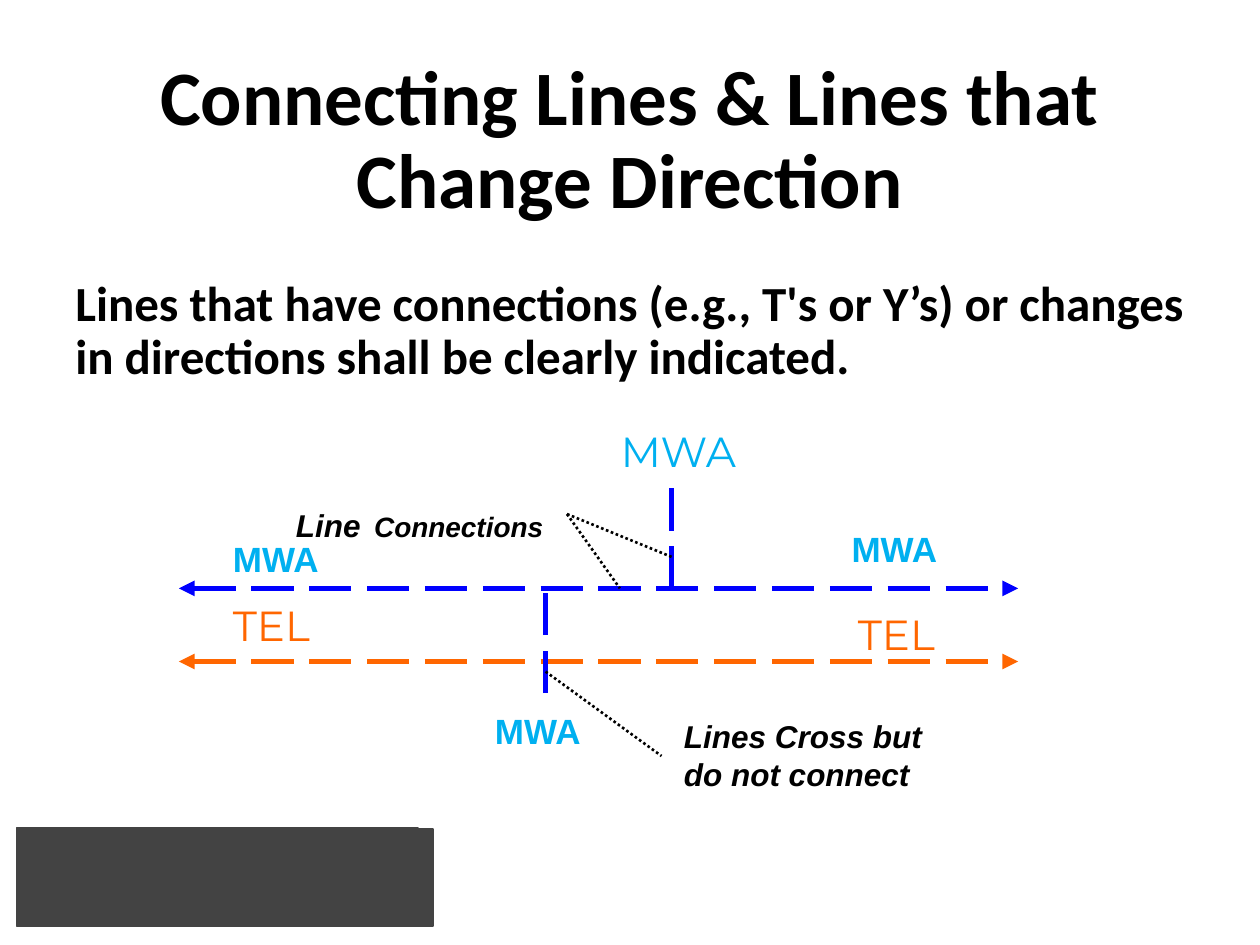
import pptx
import pptx.util
import pptx.dml.color
import pptx.enum.dml
import pptx.enum.shapes
import pptx.enum.text
import pptx.oxml.ns
import lxml.etree

Inches, Pt = pptx.util.Inches, pptx.util.Pt
DASH = pptx.enum.dml.MSO_LINE
ALIGN = pptx.enum.text.PP_ALIGN
ANCHOR = pptx.enum.text.MSO_ANCHOR

COLORS = {
    "black": "000000",
    "footer": "434343",
    "water": "0000FF",
    "water label": "00B0F0",
    "telecom": "FF6600",
}

FOOTER_BLOCKS = [(0.13, 6.57, 3.19, 0.78), (0.21, 6.58, 3.23, 0.77)]

TITLE = "Connecting Lines & Lines that Change Direction"
RULE = ("Lines that have connections (e.g., T's or Y’s) or changes "
        "in directions shall be clearly indicated.")

STYLES = {
    "title": dict(font="Calibri", size=44, color="black", bold=True, spacing=0.9,
                  align=ALIGN.CENTER, anchor=ANCHOR.MIDDLE),
    "body": dict(font="Calibri", size=28, color="black", bold=True, spacing=0.9),
    "water": dict(font="Arial", size=20, color="water label", bold=True),
    "water light": dict(font="Montserrat", size=24, color="water label"),
    "telecom": dict(font="Montserrat", size=24, color="telecom"),
    "note": dict(font="Arial", size=18, color="black", bold=True, italic=True),
}

TEXTS = [
    ("title", (0.69, 0.4, 8.62, 1.45), [(TITLE, None)]),
    ("body", (0.5, 2.17, 9, 4.53), [(RULE, None)]),
    ("water", (6.66, 4.14, 0.92, 0.43), [("MWA", None)]),
    ("water", (1.75, 4.22, 0.92, 0.43), [("MWA", None)]),
    ("water", (3.83, 5.58, 0.92, 0.43), [("MWA", None)]),
    ("water light", (4.83, 3.33, 1.17, 0.5), [("MWA", None)]),
    ("telecom", (6.71, 4.78, 1.08, 0.5), [("TEL", None)]),
    ("telecom", (1.75, 4.71, 1.08, 0.5), [("TEL", None)]),
    ("note", (2.25, 3.83, 2.67, 0.57), [("Line", 18), (" ", 28), ("Connections", 16)]),
    ("note", (5.33, 5.64, 2.25, 0.7), [("Lines Cross but do not connect", None)]),
]

LEFT, RIGHT = 1.42, 8.08
WATER_Y, TELECOM_Y = 4.67, 5.25
UPPER_X, LOWER_X = 5.33, 4.33
CALLOUT = (4.5, 4.08)

MAINS = [
    ("water", (LEFT, WATER_Y), (RIGHT, WATER_Y)),
    ("telecom", (LEFT, TELECOM_Y), (RIGHT, TELECOM_Y)),
]
BRANCHES = [
    ("water", (UPPER_X, WATER_Y), (UPPER_X, 3.83)),
    ("water", (LOWER_X, 5.5), (LOWER_X, WATER_Y)),
]
LEADERS = [
    ("black", CALLOUT, (UPPER_X, 4.42)),
    ("black", (LOWER_X, 5.33), (5.25, 6)),
    ("black", CALLOUT, (4.92, WATER_Y)),
]


def rgb(name):
    return pptx.dml.color.RGBColor.from_string(COLORS[name])


def add_footer_block(slide, place):
    block = slide.shapes.add_shape(
        pptx.enum.shapes.MSO_SHAPE.RECTANGLE, *map(Inches, place))
    block.shadow.inherit = False
    block.fill.solid()
    block.fill.fore_color.rgb = rgb("footer")
    block.line.color.rgb = rgb("footer")
    block.line.width = Pt(1)


def add_text(slide, style_name, place, runs):
    style = STYLES[style_name]
    frame = slide.shapes.add_textbox(*map(Inches, place)).text_frame
    frame.word_wrap = True
    frame.vertical_anchor = style.get("anchor", ANCHOR.TOP)
    paragraph = frame.paragraphs[0]
    paragraph.alignment = style.get("align", ALIGN.LEFT)
    paragraph.line_spacing = style.get("spacing", 1.0)
    font = paragraph.font
    font.name = style["font"]
    font.size = Pt(style["size"])
    font.bold = style.get("bold", False)
    font.italic = style.get("italic", False)
    font.color.rgb = rgb(style["color"])
    for words, size in runs:
        run = paragraph.add_run()
        run.text = words
        if size:
            run.font.size = Pt(size)


def add_line(slide, color, start, end, width, dash, arrows=False):
    connector = slide.shapes.add_connector(
        pptx.enum.shapes.MSO_CONNECTOR.STRAIGHT, *map(Inches, start + end))
    connector.line.color.rgb = rgb(color)
    connector.line.width = Pt(width)
    connector.line.dash_style = dash
    qn = pptx.oxml.ns.qn
    properties = connector._element.spPr
    if arrows:
        outline = properties.find(qn("a:ln"))
        for tip in ("a:headEnd", "a:tailEnd"):
            lxml.etree.SubElement(outline, qn(tip), type="triangle")
    lxml.etree.SubElement(properties, qn("a:effectLst"))


def main():
    deck = pptx.Presentation()
    deck.slide_width, deck.slide_height = Inches(10), Inches(7.5)
    slide = deck.slides.add_slide(deck.slide_layouts[6])
    for place in FOOTER_BLOCKS:
        add_footer_block(slide, place)
    for main_line in MAINS:
        add_line(slide, *main_line, 3, DASH.LONG_DASH, arrows=True)
    for branch in BRANCHES:
        add_line(slide, *branch, 3, DASH.LONG_DASH)
    for leader in LEADERS:
        add_line(slide, *leader, 1.5, DASH.ROUND_DOT)
    for text in TEXTS:
        add_text(slide, *text)
    deck.save("out.pptx")


if __name__ == "__main__":
    main()
